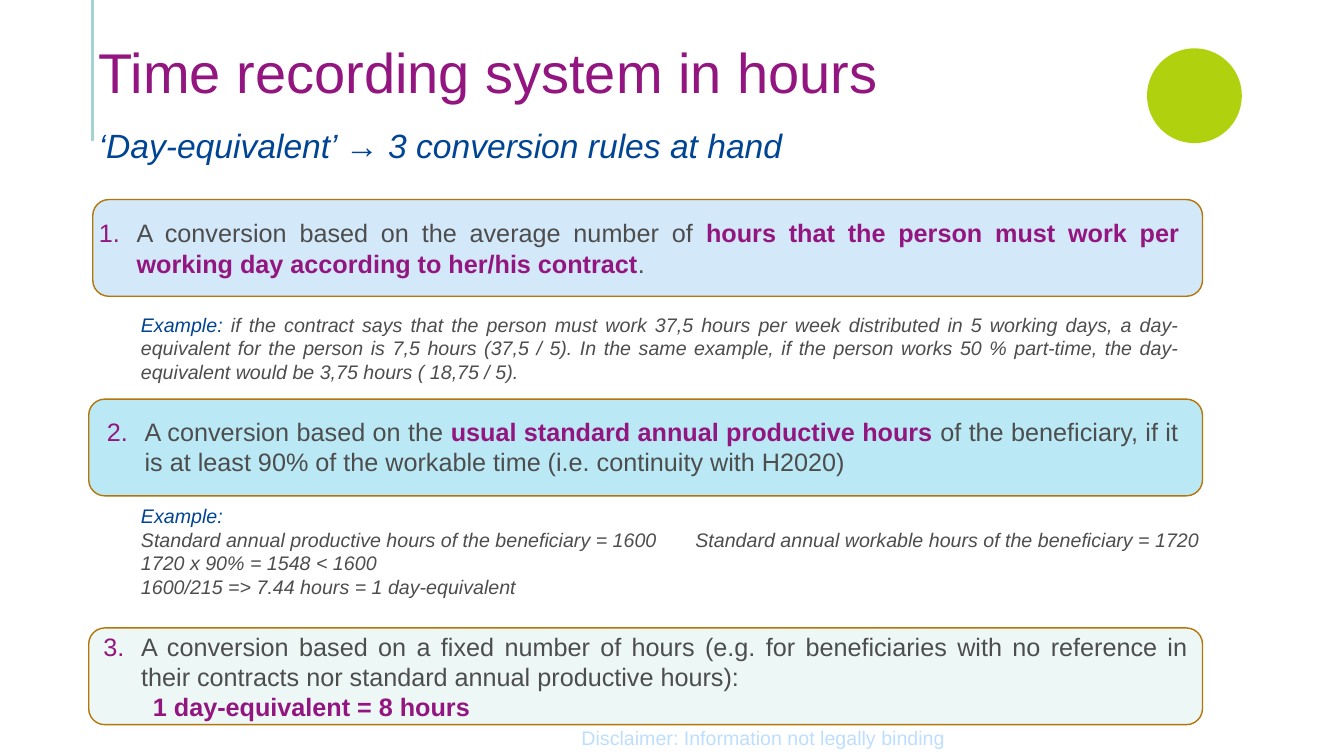
from dataclasses import dataclass

from lxml import etree
from pptx import Presentation
from pptx.dml.color import RGBColor
from pptx.enum.shapes import MSO_CONNECTOR, MSO_SHAPE
from pptx.enum.text import MSO_ANCHOR, MSO_AUTO_SIZE, PP_ALIGN
from pptx.oxml.ns import qn
from pptx.util import Emu, Inches, Pt

STRAIGHT = MSO_CONNECTOR.STRAIGHT
ROUNDED, OVAL = MSO_SHAPE.ROUNDED_RECTANGLE, MSO_SHAPE.OVAL
TOP, MIDDLE, BOTTOM = MSO_ANCHOR.TOP, MSO_ANCHOR.MIDDLE, MSO_ANCHOR.BOTTOM
FIXED, GROW = MSO_AUTO_SIZE.NONE, MSO_AUTO_SIZE.SHAPE_TO_FIT_TEXT
LEFT, JUSTIFY = PP_ALIGN.LEFT, PP_ALIGN.JUSTIFY

COLUMNS, ROWS = 160, 90
SLIDE_WIDTH, SLIDE_HEIGHT = Inches(40 / 3), Inches(7.5)
TWO_CONTENT_LAYOUT = 3


@dataclass(frozen=True)
class Theme:
    font: str = "Arial"
    purple: str = "931680"
    blue: str = "004494"
    grey: str = "4D4D4D"
    pale_blue: str = "BDDEFF"
    teal: str = "A2D5D0"
    lime: str = "B0D10E"
    border: str = "B47509"
    title_size: int = 40
    subtitle_size: int = 24
    rule_size: int = 18
    note_size: int = 14


THEME = Theme()


@dataclass(frozen=True)
class Place:
    column: float
    row: float
    columns: float
    rows: float


@dataclass(frozen=True)
class Span:
    text: str
    color: str = THEME.grey
    bold: bool = False
    italic: bool = False


@dataclass(frozen=True)
class Para:
    spans: tuple[Span, ...]
    align: PP_ALIGN = LEFT
    number: int = 0
    indent: float = 0
    tab: float = 0
    line_spacing: float = 1


@dataclass(frozen=True)
class Card:
    place: Place
    fill: str


def across(columns: float) -> Emu:
    return Emu(round(SLIDE_WIDTH * columns / COLUMNS))


def down(rows: float) -> Emu:
    return Emu(round(SLIDE_HEIGHT * rows / ROWS))


def bounds(place: Place) -> tuple[Emu, Emu, Emu, Emu]:
    return across(place.column), down(place.row), across(place.columns), down(place.rows)


def set_layout(para, spec: Para) -> None:
    para.alignment = spec.align
    para.space_before = Pt(0)
    para.line_spacing = spec.line_spacing
    properties = para._p.get_or_add_pPr()
    indent = across(spec.indent)
    properties.set("marL", str(indent))
    properties.set("indent", str(-indent if spec.number else 0))
    if spec.number:
        color = etree.SubElement(properties, qn("a:buClr"))
        etree.SubElement(color, qn("a:srgbClr"), val=THEME.purple)
        etree.SubElement(properties, qn("a:buFont"), typeface=THEME.font)
        etree.SubElement(properties, qn("a:buAutoNum"), type="arabicPeriod", startAt=str(spec.number))
    if spec.tab:
        tabs = etree.SubElement(properties, qn("a:tabLst"))
        etree.SubElement(tabs, qn("a:tab"), pos=str(across(spec.tab)), algn="l")


def write(box, paras: tuple[Para, ...], size: int, anchor: MSO_ANCHOR = TOP, fit: MSO_AUTO_SIZE = FIXED) -> None:
    frame = box.text_frame
    frame.word_wrap = True
    frame.auto_size = fit
    frame.vertical_anchor = anchor
    for index, spec in enumerate(paras):
        para = frame.add_paragraph() if index else frame.paragraphs[0]
        set_layout(para, spec)
        for span in spec.spans:
            run = para.add_run()
            run.text = span.text
            run.font.name = THEME.font
            run.font.size = Pt(size)
            run.font.bold = span.bold
            run.font.italic = span.italic
            run.font.color.rgb = RGBColor.from_string(span.color)


def add_text(page, place: Place, paras: tuple[Para, ...], size: int) -> None:
    write(page.shapes.add_textbox(*bounds(place)), paras, size, fit=GROW)


def move(page, holder, place: Place) -> None:
    holder.left, holder.top, holder.width, holder.height = bounds(place)
    page.shapes.element.append(holder.element)


def add_shape(page, kind: MSO_SHAPE, place: Place, fill: str, border: str = ""):
    shape = page.shapes.add_shape(kind, *bounds(place))
    shape.shadow.inherit = False
    shape.fill.solid()
    shape.fill.fore_color.rgb = RGBColor.from_string(fill)
    if border:
        shape.line.color.rgb = RGBColor.from_string(border)
        shape.line.width = Pt(1)
    else:
        shape.line.fill.background()
    return shape


def add_margin_line(page) -> None:
    column = across(11.04)
    line = page.shapes.add_connector(STRAIGHT, column, 0, column, down(16.8))
    line.line.color.rgb = RGBColor.from_string(THEME.teal)
    line.line.width = Pt(2.25)
    etree.SubElement(line.element.spPr, qn("a:effectLst"))


def rule(number: int, *spans: Span) -> Para:
    return Para(spans, JUSTIFY, number, indent=4.5)


def note(*spans: Span, tab: float = 0) -> Para:
    return Para(spans, JUSTIFY, tab=tab)


CARDS = (
    Card(Place(11.04, 23.76, 132.12, 11.52), "D3E8F9"),
    Card(Place(10.56, 47.52, 132.6, 11.52), "BAE9F5"),
    Card(Place(10.56, 74.76, 132.6, 11.52), "ECF7F6"),
)
RULE_PLACES = (Place(10.56, 25.32, 131.04, 8.52), Place(11.52, 48.96, 129.96, 8.52))
RULES = (
    (rule(1, Span("A conversion based on the average number of "),
          Span("hours that the person must work per working day according to her/his contract", THEME.purple, True),
          Span(".")),),
    (rule(2, Span("A conversion based on the "),
          Span("usual standard annual productive hours ", THEME.purple, True),
          Span("of the beneficiary, if it is at least 90% of the workable time (i.e. continuity with H2020)")),),
    (rule(3, Span("A conversion based on a fixed number of hours (e.g. for beneficiaries with no reference in "
                  "their contracts nor standard annual productive hours):")),
     Para((Span("1 day-equivalent = 8 hours", THEME.purple, True),), JUSTIFY, indent=5.9)),
)
NOTE_PLACES = (Place(15.6, 36.6, 126, 9.72), Place(15.6, 59.4, 128.52, 12.48))
NOTES = (
    (note(Span("Example: ", THEME.blue, italic=True),
          Span("if the contract says that the person must work 37,5 hours per week distributed in 5 working days, "
               "a day-equivalent for the person is 7,5 hours (37,5 / 5). In the same example, if the person works "
               "50 % part-time, the day-equivalent would be 3,75 hours ( 18,75 / 5).", italic=True)),),
    (note(Span("Example:", THEME.blue, italic=True)),
     note(Span("Standard annual productive hours of the beneficiary = 1600\t"
               "Standard annual workable hours of the beneficiary = 1720", italic=True), tab=63.96),
     note(Span("1720 x 90% = 1548 < 1600", italic=True)),
     note(Span("1600/215 => 7.44 hours = 1 day-equivalent", italic=True))),
)
TITLE = (Para((Span("Time recording system in hours", THEME.purple),), line_spacing=0.9),)
SUBTITLE = (Para((Span("‘Day-equivalent’ → 3 conversion rules at hand", THEME.blue, italic=True),)),)
DISCLAIMER = (Para((Span("Disclaimer: Information not legally binding", THEME.pale_blue),)),)


def main() -> None:
    deck = Presentation()
    deck.slide_width, deck.slide_height = SLIDE_WIDTH, SLIDE_HEIGHT
    page = deck.slides.add_slide(deck.slide_layouts[TWO_CONTENT_LAYOUT])
    title, *bodies = page.placeholders

    add_margin_line(page)
    move(page, title, Place(10.56, 5.28, 135, 7.32))
    write(title, TITLE, THEME.title_size, BOTTOM)
    title.text_frame.margin_bottom = 0
    add_text(page, Place(10.56, 14.28, 137.4, 6), SUBTITLE, THEME.subtitle_size)
    add_text(page, Place(68.04, 85.8, 48.24, 4.08), DISCLAIMER, THEME.note_size)

    boxes = [add_shape(page, ROUNDED, card.place, card.fill, THEME.border) for card in CARDS]
    for body, place, paras in zip(bodies, RULE_PLACES, RULES):
        move(page, body, place)
        write(body, paras, THEME.rule_size)
    write(boxes[-1], RULES[-1], THEME.rule_size, MIDDLE)
    for place, paras in zip(NOTE_PLACES, NOTES):
        add_text(page, place, paras, THEME.note_size)

    add_shape(page, OVAL, Place(136.56, 5.76, 11.28, 11.28), THEME.lime)
    deck.save("out.pptx")


if __name__ == "__main__":
    main()
